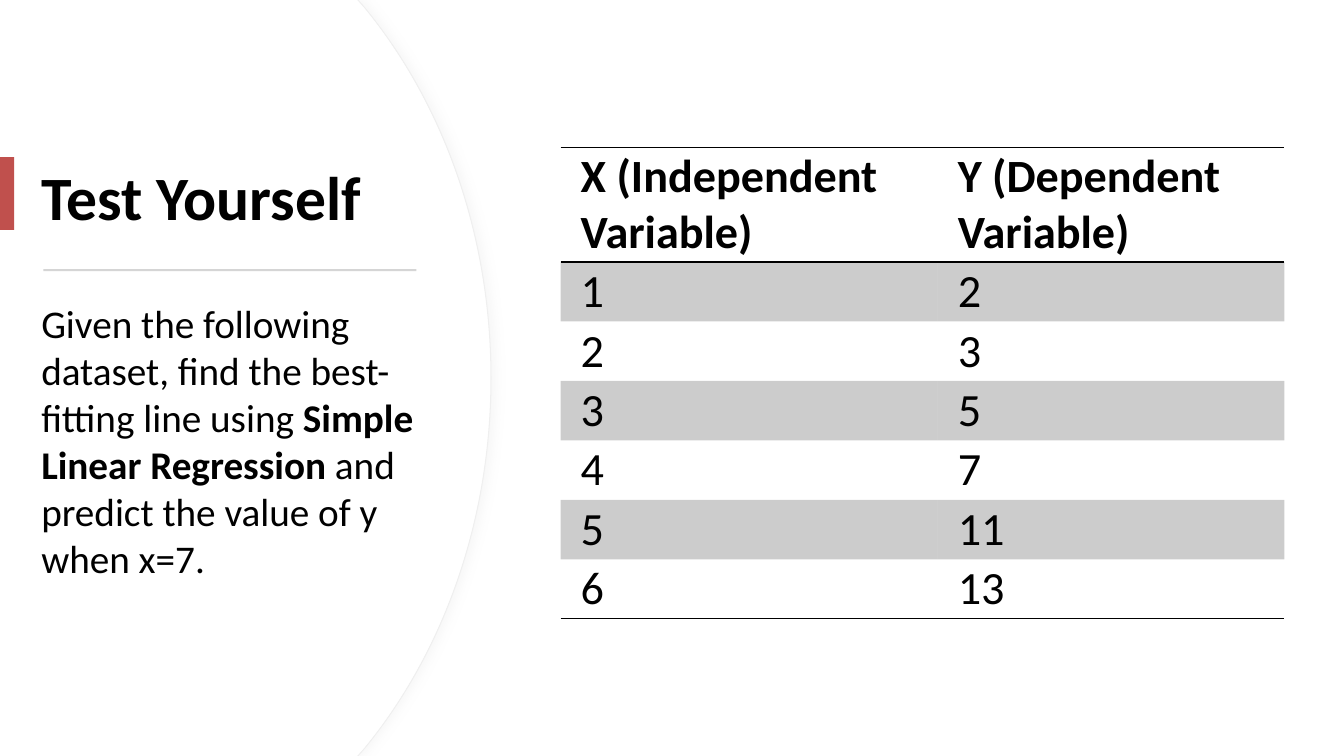
from pptx import Presentation
from pptx.dml.color import RGBColor
from pptx.enum.shapes import MSO_SHAPE
from pptx.enum.text import MSO_ANCHOR
from pptx.oxml import parse_xml
from pptx.oxml.ns import nsdecls, qn
from pptx.util import Pt

PX = 9144  # EMU per px, 100 px to the inch
SLIDE_WIDTH, SLIDE_HEIGHT = 1333, 750
FONT = "Calibri"
RECTANGLE = MSO_SHAPE.RECTANGLE
TOP, MIDDLE = MSO_ANCHOR.TOP, MSO_ANCHOR.MIDDLE
NO_STYLE_NO_GRID = "{2D5ABB26-0587-4C30-8999-92F81FD0307C}"
COLORS = {
    "text": "000000",
    "panel": "FFFFFF",
    "panel_edge": "EFEFEF",
    "shadow": "D9D9D9",
    "accent": "C0504D",
    "divider": "D5D5D5",
    "band": "000000",
    "border": "000000",
}
BAND_OPACITY = 20
SHADOW_OPACITY = 20

TITLE = "Test Yourself"
TASK = [
    ("Given the following dataset, find the best-fitting line using ", False),
    ("Simple Linear Regression", True),
    (" and predict the value of y when x=7.", False),
]
HEADERS = ("X (Independent Variable)", "Y (Dependent Variable)")
DATASET = [(1, 2), (2, 3), (3, 5), (4, 7), (5, 11), (6, 13)]


def color(name):
    return RGBColor.from_string(COLORS[name])


def px(*lengths):
    return [length * PX for length in lengths]


def bend_segments(shape, first, curve_count):
    """Turn straight segments, three at a time, into cubic curves."""
    segments = list(shape._element.iter(qn("a:lnTo")))
    for start in range(first, first + 3 * curve_count, 3):
        curve = parse_xml(f'<a:cubicBezTo {nsdecls("a")}/>')
        segments[start].addprevious(curve)
        for segment in segments[start:start + 3]:
            curve.append(segment[0])
            segment.getparent().remove(segment)


def add_curved_panel(slide, width, height):
    """White panel at the slide's left edge with a bulging right side."""
    upper = [(width - 132, 0), (width - 125, 8), (width - 48, 102), (width, 232)]
    lower = [(x, height - y) for x, y in reversed(upper)]
    builder = slide.shapes.build_freeform(0, 0, scale=PX)
    builder.add_line_segments([*upper, (width, height // 2), *lower, (0, height)])
    panel = builder.convert_to_shape()
    bend_segments(panel, 2, 2)
    panel.shadow.inherit = False
    panel.fill.solid()
    panel.fill.fore_color.rgb = color("panel")
    panel.line.fill.background()
    return panel


def add_panel_edge(panel):
    """Give the panel a thin outline and a soft shadow to the right."""
    panel.line.color.rgb = color("panel_edge")
    panel.line.width = Pt(0.75)
    effects = panel._element.spPr.find(qn("a:effectLst"))
    effects.append(parse_xml(
        f'<a:outerShdw {nsdecls("a")} blurRad="{Pt(7)}" dist="{Pt(3)}" dir="0" '
        f'algn="l" rotWithShape="0"><a:srgbClr val="{COLORS["shadow"]}">'
        f'<a:alpha val="{SHADOW_OPACITY * 1000}"/></a:srgbClr></a:outerShdw>'))


def add_bar(slide, left, top, width, height, color_name):
    bar = slide.shapes.add_shape(RECTANGLE, *px(left, top, width, height))
    bar.shadow.inherit = False
    bar.fill.solid()
    bar.fill.fore_color.rgb = color(color_name)
    bar.line.fill.background()


def format_run(run, size, bold):
    run.font.name = FONT
    run.font.size = Pt(size)
    run.font.bold = bold
    run.font.color.rgb = color("text")


def add_text(slide, left, top, width, height, pieces, size, anchor):
    box = slide.shapes.add_textbox(*px(left, top, width, height))
    frame = box.text_frame
    frame.word_wrap = True
    frame.vertical_anchor = anchor
    frame.margin_left = frame.margin_right = 0
    frame.margin_top = frame.margin_bottom = 0
    paragraph = frame.paragraphs[0]
    paragraph.space_after = Pt(6)
    for text, bold in pieces:
        run = paragraph.add_run()
        run.text = text
        format_run(run, size, bold)


def add_task_panel(slide, width, height):
    add_panel_edge(add_curved_panel(slide, width, height))
    add_curved_panel(slide, width - 1, height)
    text_left, text_width = 41, 376
    add_text(slide, text_left, 127, text_width, 135, [(TITLE, True)], 44, MIDDLE)
    add_bar(slide, 0, 156, 14, 72, "accent")
    add_bar(slide, text_left + 2, 267, text_width - 6, 2, "divider")
    add_text(slide, text_left, 297, text_width, 351, TASK, 28, TOP)


def add_borders(cell, tags):
    properties = cell._tc.get_or_add_tcPr()
    for index, tag in enumerate(tags):
        properties.insert(index, parse_xml(
            f'<a:{tag} {nsdecls("a")} w="{Pt(1)}"><a:solidFill>'
            f'<a:srgbClr val="{COLORS["border"]}"/></a:solidFill></a:{tag}>'))


def fill_cell(cell, banded):
    if not banded:
        cell.fill.background()
        return
    cell.fill.solid()
    cell.fill.fore_color.rgb = color("band")
    for fill_color in cell._tc.tcPr.iter(qn("a:srgbClr")):
        fill_color.append(parse_xml(
            f'<a:alpha {nsdecls("a")} val="{BAND_OPACITY * 1000}"/>'))


def add_dataset_table(slide, left, top, column_widths, header_height, row_height):
    rows = [HEADERS, *DATASET]
    height = header_height + row_height * len(DATASET)
    table = slide.shapes.add_table(
        len(rows), len(HEADERS), *px(left, top, sum(column_widths), height)).table
    table._tbl.tblPr.find(qn("a:tableStyleId")).text = NO_STYLE_NO_GRID
    for column, width in zip(table.columns, column_widths):
        column.width = width * PX
    borders = {0: ("lnT", "lnB"), len(DATASET): ("lnB",)}
    for row_index, values in enumerate(rows):
        is_header = row_index == 0
        table.rows[row_index].height = (header_height if is_header else row_height) * PX
        for column_index, value in enumerate(values):
            cell = table.cell(row_index, column_index)
            cell.text_frame.text = str(value)
            format_run(cell.text_frame.paragraphs[0].runs[0], 33, is_header)
            cell.vertical_anchor = MIDDLE
            cell.margin_left = cell.margin_right = 20 * PX
            cell.margin_top = cell.margin_bottom = 0
            fill_cell(cell, row_index % 2 == 1)
            add_borders(cell, borders.get(row_index, ()))


def main():
    presentation = Presentation()
    presentation.slide_width, presentation.slide_height = px(SLIDE_WIDTH, SLIDE_HEIGHT)
    slide = presentation.slides.add_slide(presentation.slide_layouts[6])
    add_task_panel(slide, 487, SLIDE_HEIGHT)
    add_dataset_table(slide, 556, 146, (374, 344), 114, 59)
    presentation.save("out.pptx")


if __name__ == "__main__":
    main()
